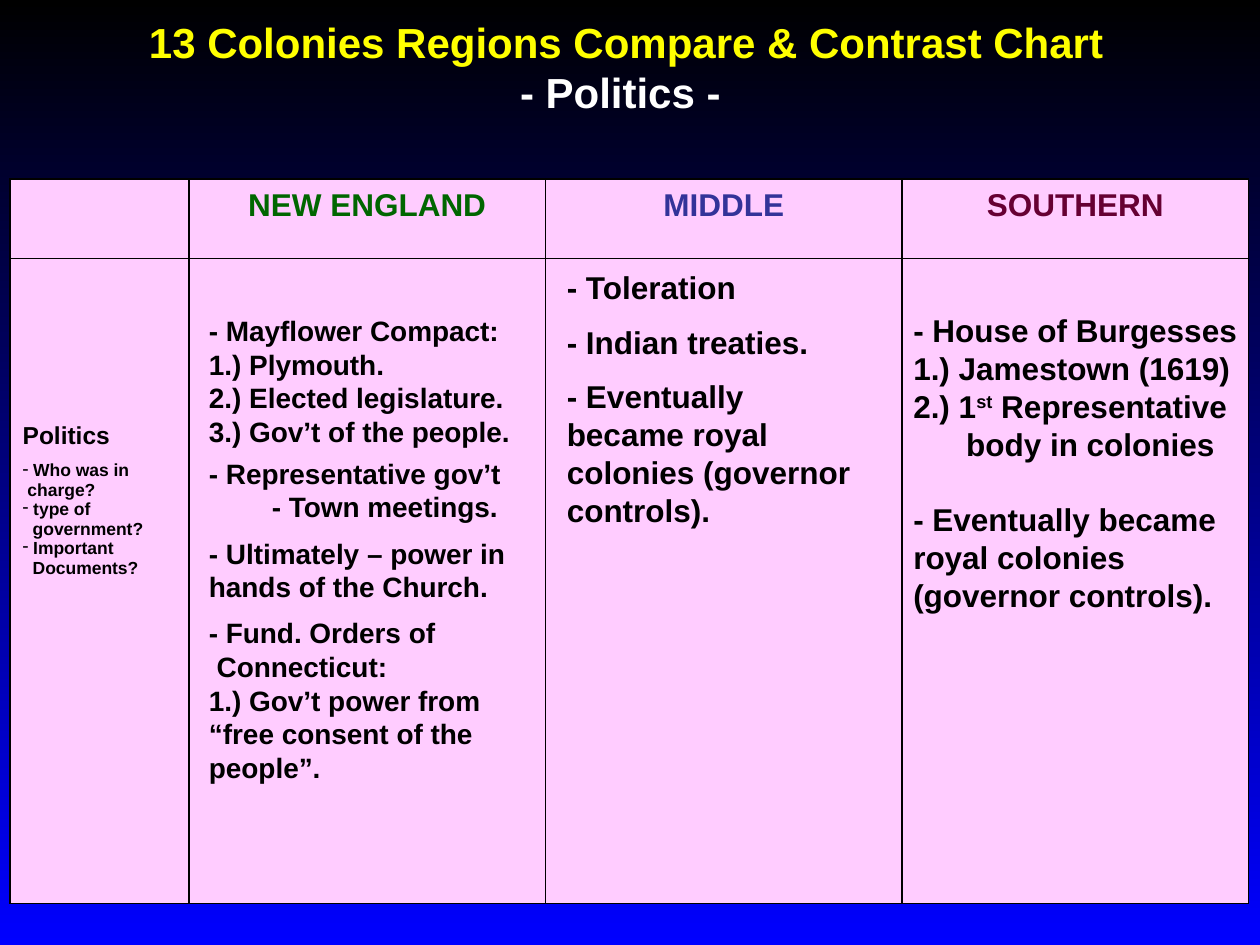
"""Build a slide comparing politics across the colonial regions."""
import dataclasses

import pptx
import pptx.dml.color
import pptx.enum.text
import pptx.oxml
import pptx.oxml.ns
import pptx.util

Inches = pptx.util.Inches
Pt = pptx.util.Pt
CENTER = pptx.enum.text.PP_ALIGN.CENTER


@dataclasses.dataclass(frozen=True)
class Theme:
    """Colours, font and type sizes of the slide."""
    font: str = "Arial"
    black: str = "000000"
    blue: str = "0000FF"
    white: str = "FFFFFF"
    title: str = "FFFF00"
    cell: str = "FFCCFF"
    new_england: str = "006600"
    middle: str = "333399"
    southern: str = "660033"
    title_size: int = 24
    large: int = 18
    body: int = 16
    label: int = 14
    small: int = 10
    leading: float = 1.2


@dataclasses.dataclass
class Line:
    """One paragraph, with its gap before in points and indent in inches."""
    text: str
    gap: float = 0
    indent: float = 0
    bullet: str = ""
    size: int = 0
    color: str = ""
    leading: float = 0
    superscript: str = ""


class Deck:
    """Hold the theme and current slide and draw each kind of element."""

    def __init__(self, prs, theme):
        """Add a blank slide to the presentation."""
        self.theme = theme
        self.s = prs.slides.add_slide(prs.slide_layouts[6])

    def rgb(self, color):
        """Turn a hex string into a colour."""
        return pptx.dml.color.RGBColor.from_string(color)

    def background(self, *colors):
        """Fill the background with a gradient running downwards."""
        fill = self.s.background.fill
        fill.gradient()
        fill.gradient_angle = 270
        for stop, color in zip(fill.gradient_stops, colors):
            stop.color.rgb = self.rgb(color)

    def fill_text(self, tf, lines, size, color, align=None):
        """Put lines into a text frame."""
        for i, line in enumerate(lines):
            p = tf.add_paragraph() if i else tf.paragraphs[0]
            points = line.size or size
            p.alignment = align
            p.space_before = Pt(line.gap)
            p.line_spacing = Pt(points * (line.leading or self.theme.leading))
            p.font.name = self.theme.font
            p.font.size = Pt(points)
            p.font.bold = True
            p.font.color.rgb = self.rgb(line.color or color)
            pPr = p._p.get_or_add_pPr()
            pPr.set("marL", str(Inches(line.indent)))
            pPr.set("indent", "0")
            if line.bullet:
                bu = pptx.oxml.parse_xml(
                    f'<a:buChar {pptx.oxml.ns.nsdecls("a")} char="{line.bullet}"/>')
                pPr.insert_element_before(bu, "a:tabLst", "a:defRPr", "a:extLst")
            parts = line.text.partition(line.superscript) if line.superscript else [line.text]
            for part in parts:
                r = p.add_run()
                r.text = part
                if part == line.superscript:
                    r._r.get_or_add_rPr().set("baseline", "30000")

    def text(self, box, lines, size, color, align=None, top=0.05):
        """Add a wrapping text box."""
        tf = self.s.shapes.add_textbox(*map(Inches, box)).text_frame
        tf.word_wrap = True
        tf.margin_top = Inches(top)
        self.fill_text(tf, lines, size, color, align)

    def border(self, cell):
        """Draw thin lines around a cell."""
        tcPr = cell._tc.get_or_add_tcPr()
        for i, side in enumerate(("lnL", "lnR", "lnT", "lnB")):
            tcPr.insert(i, pptx.oxml.parse_xml(
                f'<a:{side} {pptx.oxml.ns.nsdecls("a")} w="{Pt(1)}"><a:solidFill>'
                f'<a:srgbClr val="{self.theme.black}"/></a:solidFill></a:{side}>'))

    def table(self, box, widths, heights):
        """Add a plain table with filled, bordered cells."""
        table = self.s.shapes.add_table(
            len(heights), len(widths), *map(Inches, box)).table
        table.first_row = table.horz_banding = False
        for column, width in zip(table.columns, widths):
            column.width = Inches(width)
        for row, height in zip(table.rows, heights):
            row.height = Inches(height)
        for cell in table.iter_cells():
            cell.fill.solid()
            cell.fill.fore_color.rgb = self.rgb(self.theme.cell)
            self.border(cell)
        return table


def main():
    """Build and save the slide."""
    prs = pptx.Presentation()
    prs.slide_width, prs.slide_height = Inches(10), Inches(7.5)
    t = Theme()
    deck = Deck(prs, t)
    deck.background(t.black, t.blue)
    deck.text((0.93, 0.08, 8.08, 0.9), [
        Line("13 Colonies Regions Compare & Contrast Chart"),
        Line("- Politics - ", color=t.white),
    ], t.title_size, t.title, CENTER)

    table = deck.table((0.08, 1.42, 9.83, 5.75), (1.42, 2.83, 2.83, 2.75), (0.63, 5.12))
    regions = (("NEW ENGLAND", t.new_england), ("MIDDLE", t.middle), ("SOUTHERN", t.southern))
    for i, (name, color) in enumerate(regions, 1):
        deck.fill_text(table.cell(0, i).text_frame, [Line(name)], t.large, color, CENTER)

    topic = table.cell(1, 0)
    topic.margin_top = Inches(1.29)
    deck.fill_text(topic.text_frame, [
        Line("Politics", size=t.label),
        Line(" Who was in", gap=6.3, bullet="-", leading=1.11),
        Line(" charge?", leading=1.11),
        Line(" type of", bullet="-", leading=1.11),
        Line("government?", indent=0.08, leading=1.11),
        Line(" Important", bullet="-", leading=1.11),
        Line("Documents?", indent=0.08, leading=1.11),
    ], t.small, t.black)

    deck.text((1.56, 2.07, 2.63, 4.24), [
        Line("- Mayflower Compact:"),
        Line("1.) Plymouth."),
        Line("2.) Elected legislature."),
        Line("3.) Gov’t of the people."),
        Line("- Representative gov’t", gap=4.8),
        Line("- Town meetings.", indent=0.5),
        Line("- Ultimately – power in", gap=7.2),
        Line("hands of the Church."),
        Line("- Fund. Orders of", gap=7.2),
        Line(" Connecticut:"),
        Line("1.) Gov’t power from"),
        Line("“free consent of the"),
        Line("people”."),
    ], t.body, t.black, top=0.42)

    deck.text((4.4, 2.08, 2.52, 2.47), [
        Line("- Toleration"),
        Line("- Indian treaties.", gap=9.6),
        Line("- Eventually became royal colonies (governor controls).", gap=9.6),
    ], t.large, t.black)

    deck.text((7.15, 2.12, 2.8, 3.13), [
        Line("- House of Burgesses"),
        Line("1.) Jamestown (1619)"),
        Line("2.) 1st Representative", superscript="st"),
        Line("body in colonies", indent=0.42),
        Line("- Eventually became", gap=21.6),
        Line("royal colonies"),
        Line("(governor controls)."),
    ], t.large, t.black, top=0.35)
    prs.save("out.pptx")


if __name__ == "__main__":
    main()
